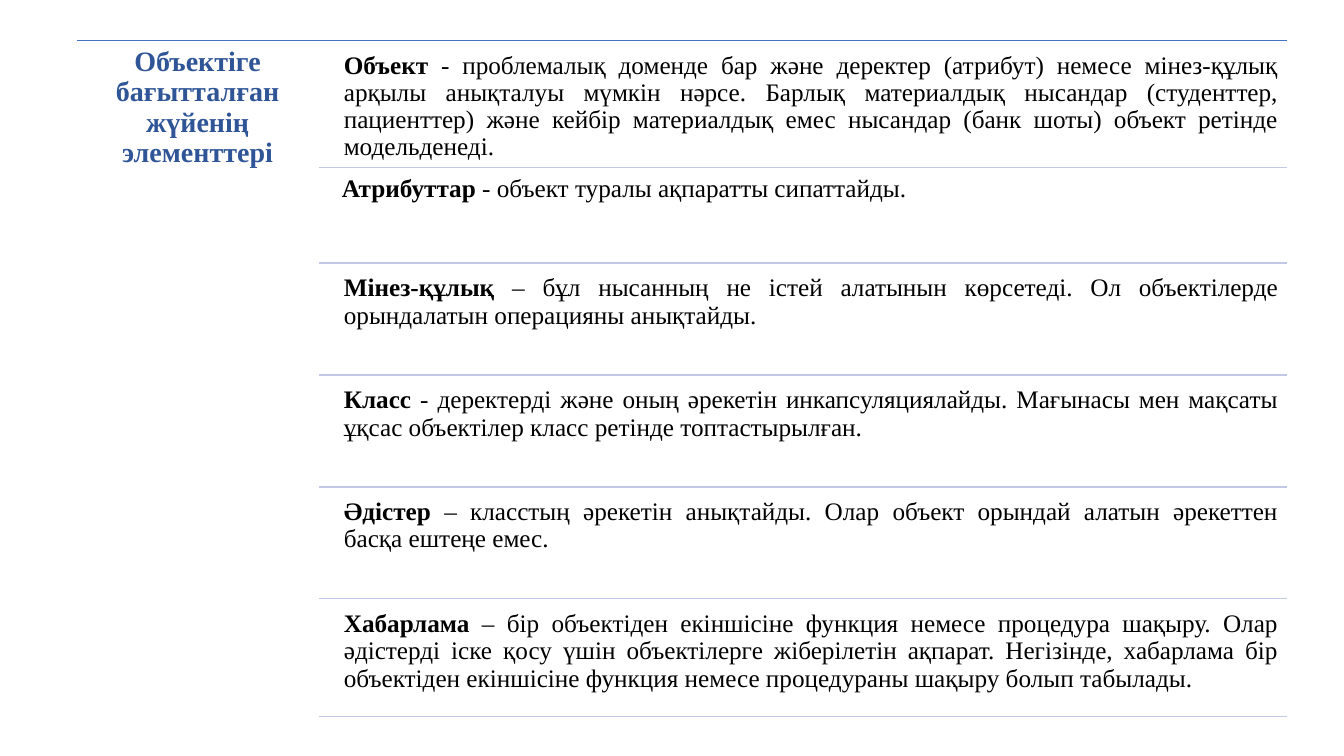
from lxml import etree
from pptx import Presentation
from pptx.dml.color import RGBColor
from pptx.enum.shapes import MSO_CONNECTOR
from pptx.enum.text import MSO_ANCHOR, MSO_AUTO_SIZE, PP_ALIGN
from pptx.oxml.ns import qn
from pptx.util import Inches, Pt

STRAIGHT = MSO_CONNECTOR.STRAIGHT
TOP = MSO_ANCHOR.TOP
NO_FIT = MSO_AUTO_SIZE.NONE
CENTER, JUSTIFY = PP_ALIGN.CENTER, PP_ALIGN.JUSTIFY

LEFT, SPLIT, RIGHT = 0.76, 3.16, 12.76
FIRST_RULE, ROW = 2.61, 1.11
RULES = [0.4, 1.66] + [FIRST_RULE + ROW * i for i in range(4)] + [7.11]

DEFINITIONS = [
    ("Объект", " - проблемалық доменде бар және деректер (атрибут) немесе мінез-құлық "
     "арқылы анықталуы мүмкін нәрсе. Барлық материалдық нысандар (студенттер, пациенттер) "
     "және кейбір материалдық емес нысандар (банк шоты) объект ретінде модельденеді."),
    ("Атрибуттар ", "- объект туралы ақпаратты сипаттайды."),
    ("Мінез-құлық ", "– бұл нысанның не істей алатынын көрсетеді. Ол объектілерде "
     "орындалатын операцияны анықтайды."),
    ("Класс ", "- деректерді және оның әрекетін инкапсуляциялайды. Мағынасы мен мақсаты "
     "ұқсас объектілер класс ретінде топтастырылған."),
    ("Әдістер ", "– класстың әрекетін анықтайды. Олар объект орындай алатын әрекеттен "
     "басқа ештеңе емес."),
    ("Хабарлама ", "– бір объектіден екіншісіне функция немесе процедура шақыру. Олар "
     "әдістерді іске қосу үшін объектілерге жіберілетін ақпарат. Негізінде, хабарлама бір "
     "объектіден екіншісіне функция немесе процедураны шақыру болып табылады."),
]


def color(value):
    return RGBColor.from_string(value)


def write(shape, inset, align, size, hue, runs):
    frame = shape.text_frame
    frame.word_wrap = True
    frame.auto_size = NO_FIT
    frame.vertical_anchor = TOP
    frame.margin_left = frame.margin_right = Inches(inset)
    frame.margin_top = frame.margin_bottom = Inches(inset)
    paragraph = frame.paragraphs[0]
    paragraph.alignment = align
    paragraph.line_spacing = 0.9
    for words, bold in runs:
        run = paragraph.add_run()
        run.text = words
        run.font.name = "Times New Roman"
        run.font.size = Pt(size)
        run.font.bold = bold
        run.font.color.rgb = color(hue)


prs = Presentation()
prs.slide_width, prs.slide_height = Inches(13.33), Inches(7.5)
slide = prs.slides.add_slide(prs.slide_layouts[5])

heading = slide.shapes.title
heading.left, heading.top = Inches(LEFT), Inches(0.39)
heading.width, heading.height = Inches(SPLIT - LEFT), Inches(6.7)
write(heading, 0.08, CENTER, 20, "2F5597",
      [("Объектіге бағытталған жүйенің элементтері", True)])

for index, y in enumerate(RULES):
    start, hue = (LEFT, "4472C4") if index == 0 else (SPLIT, "C1C9E4")
    rule = slide.shapes.add_connector(
        STRAIGHT, Inches(start), Inches(y), Inches(RIGHT), Inches(y))
    rule.line.color.rgb = color(hue)
    rule.line.width = Pt(1)
    etree.SubElement(rule._element.spPr, qn("a:effectLst"))

for (term, meaning), y in zip(DEFINITIONS, RULES):
    indent, gap = (0.16, 0.01) if term == "Атрибуттар " else (0.18, 0.05)
    definition = slide.shapes.add_textbox(
        Inches(SPLIT + indent), Inches(y + gap), Inches(9.41), Inches(1.06))
    write(definition, 0.07, JUSTIFY, 18, "000000", [(term, True), (meaning, False)])

prs.save("out.pptx")
